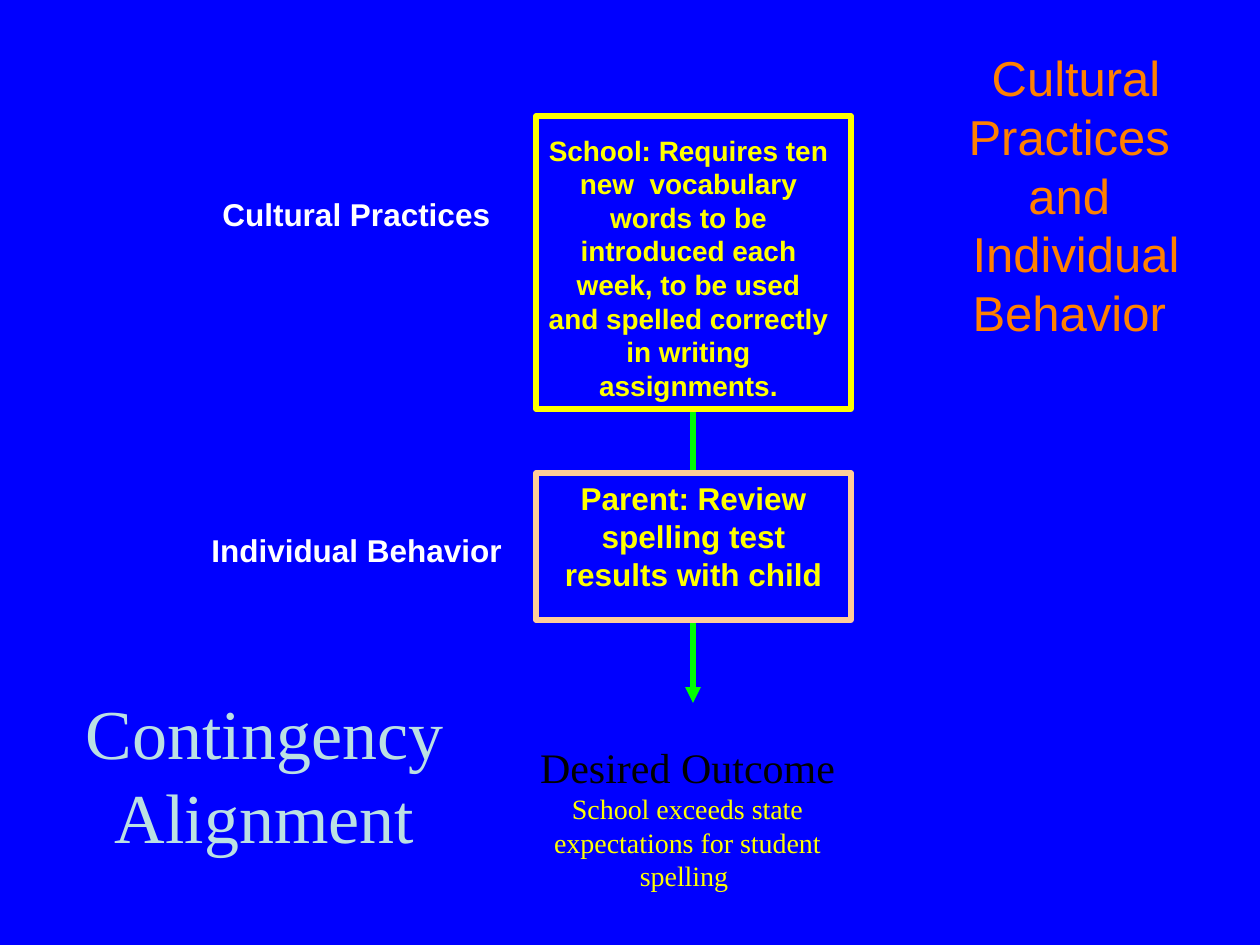
from lxml.etree import SubElement
from pptx import Presentation
from pptx.dml.color import RGBColor
from pptx.enum.shapes import MSO_CONNECTOR, MSO_SHAPE
from pptx.enum.text import MSO_ANCHOR, MSO_AUTO_SIZE, PP_ALIGN
from pptx.oxml.ns import qn
from pptx.util import Emu, Pt

EMU_PER_PX = 914400 / 126


def px(*lengths):
    """Turn pixel lengths into EMU."""
    return [Emu(round(n * EMU_PER_PX)) for n in lengths]


def write(s, text, styles, font, bold=False, align=PP_ALIGN.CENTER):
    """Fill a shape with text; styles holds (size, colour) for each paragraph."""
    tf = s.text_frame
    tf.word_wrap = True
    tf.auto_size = MSO_AUTO_SIZE.NONE
    tf.text = text
    for p, (size, colour) in zip(tf.paragraphs, styles):
        p.alignment = align
        for r in p.runs:
            r.font.name = font
            r.font.size = Pt(size)
            r.font.bold = bold
            r.font.color.rgb = RGBColor.from_string(colour)


prs = Presentation()
prs.slide_width, prs.slide_height = px(1260, 945)
slide = prs.slides.add_slide(prs.slide_layouts[5])
slide.background.fill.solid()
slide.background.fill.fore_color.rgb = RGBColor.from_string("0000FF")

title = slide.shapes.title
title.left, title.top, title.width, title.height = px(892, 53, 368, 283)
write(title, "Cultural Practices \vand \vIndividual Behavior ", [(28, "FF8000")], "Arial")
title.text_frame.vertical_anchor = MSO_ANCHOR.MIDDLE

# The arrow runs behind both boxes
arrow = slide.shapes.add_connector(MSO_CONNECTOR.STRAIGHT, *px(693, 126, 693, 703))
arrow.line.color.rgb = RGBColor.from_string("00FF00")
arrow.line.width = Pt(3)
SubElement(arrow.line._get_or_add_ln(), qn("a:tailEnd"), type="triangle")
SubElement(arrow._element.spPr, qn("a:effectLst"))

boxes = [
    ((536, 116, 315, 293), (536, 127, 305, 282), "FFFF00", 16,
     "School: Requires ten new  vocabulary words to be introduced each week, "
     "to be used and spelled correctly in writing assignments."),
    ((536, 473, 315, 147), (536, 473, 315, 126), "FFCC99", 18,
     "Parent: Review spelling test results with child"),
]
for frame, text_area, outline, size, text in boxes:
    group = slide.shapes.add_group_shape()
    s = group.shapes.add_shape(MSO_SHAPE.RECTANGLE, *px(*frame))
    s.shadow.inherit = False
    s.fill.solid()
    s.fill.fore_color.rgb = RGBColor.from_string("0000FF")
    s.line.color.rgb = RGBColor.from_string(outline)
    s.line.width = Pt(3)
    label = group.shapes.add_textbox(*px(*text_area))
    write(label, text, [(size, "FFFF00")], "Arial", bold=True)

alignment = slide.shapes.add_textbox(*px(73, 683, 383, 180))
write(alignment, "Contingency\nAlignment", [(40, "BBE0E3")] * 2, "Times New Roman")

outcome = slide.shapes.add_textbox(*px(514, 735, 347, 164))
write(outcome, "Desired Outcome\nSchool exceeds state expectations for student spelling ",
      [(24, "000000"), (16, "FFFF00")], "Times New Roman")

for text, area in [("Cultural Practices", (210, 189, 294, 50)),
                   ("Individual Behavior", (199, 525, 325, 50))]:
    s = slide.shapes.add_textbox(*px(*area))
    write(s, text, [(18, "FFFFFF")], "Arial", bold=True, align=PP_ALIGN.LEFT)

prs.save("out.pptx")
